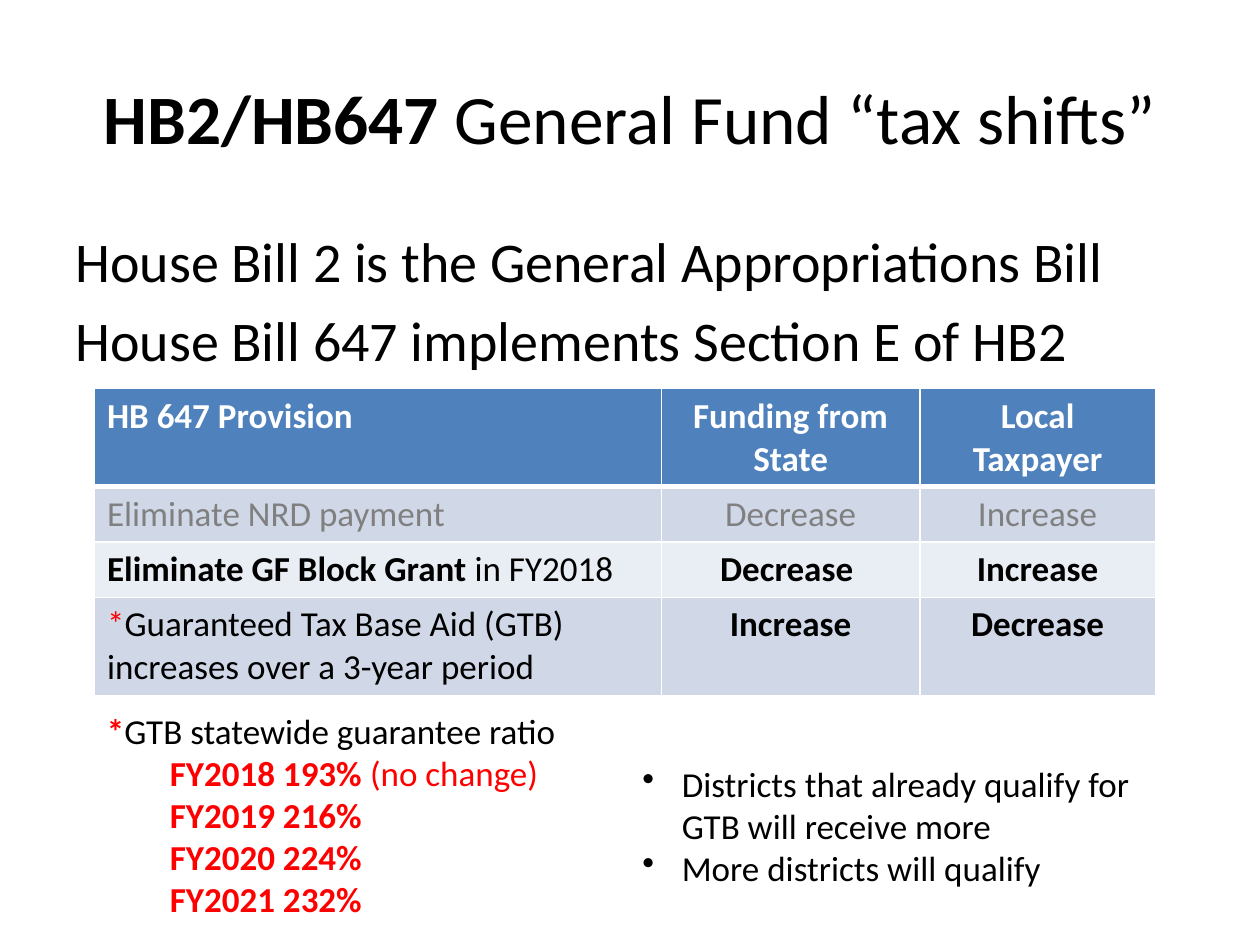
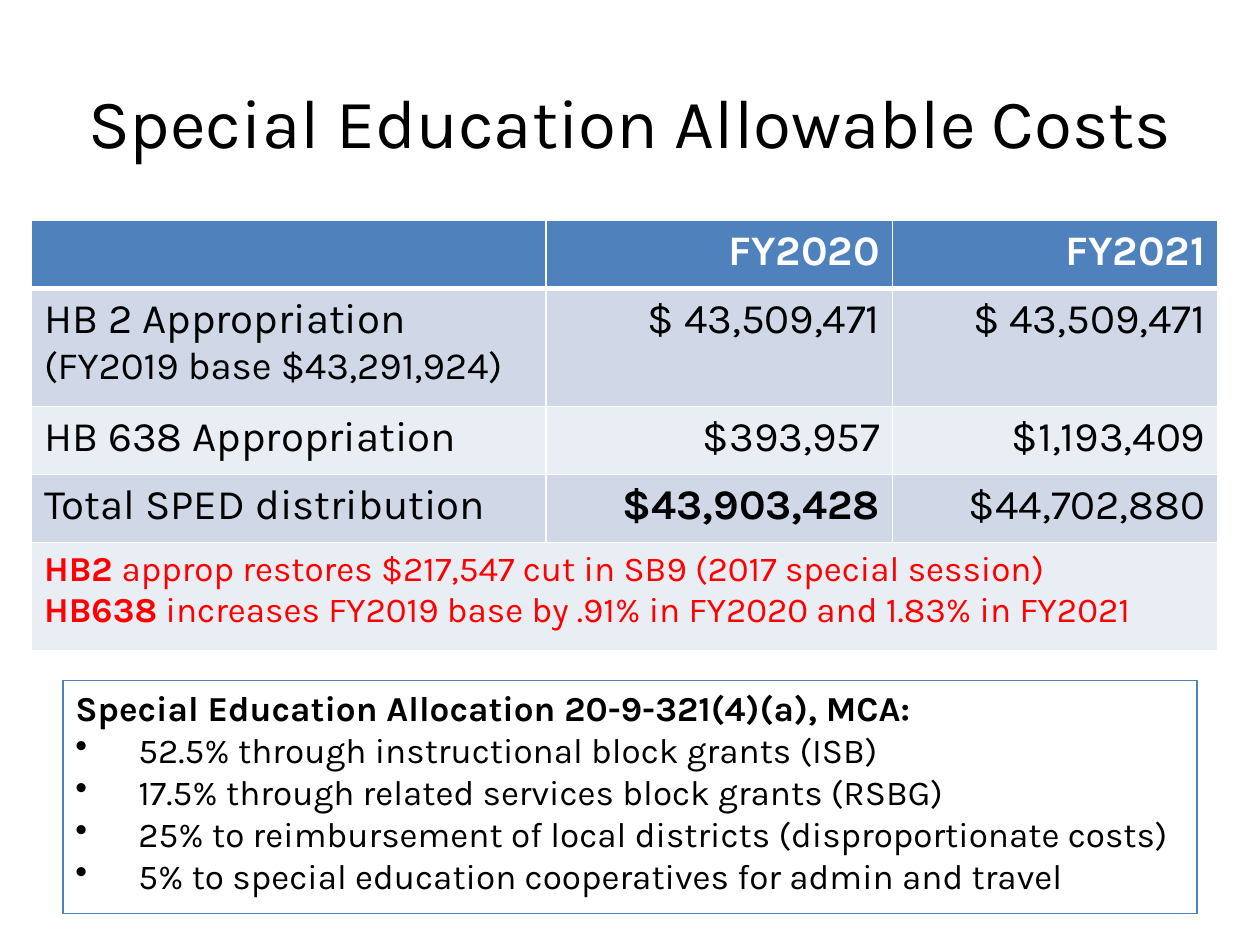
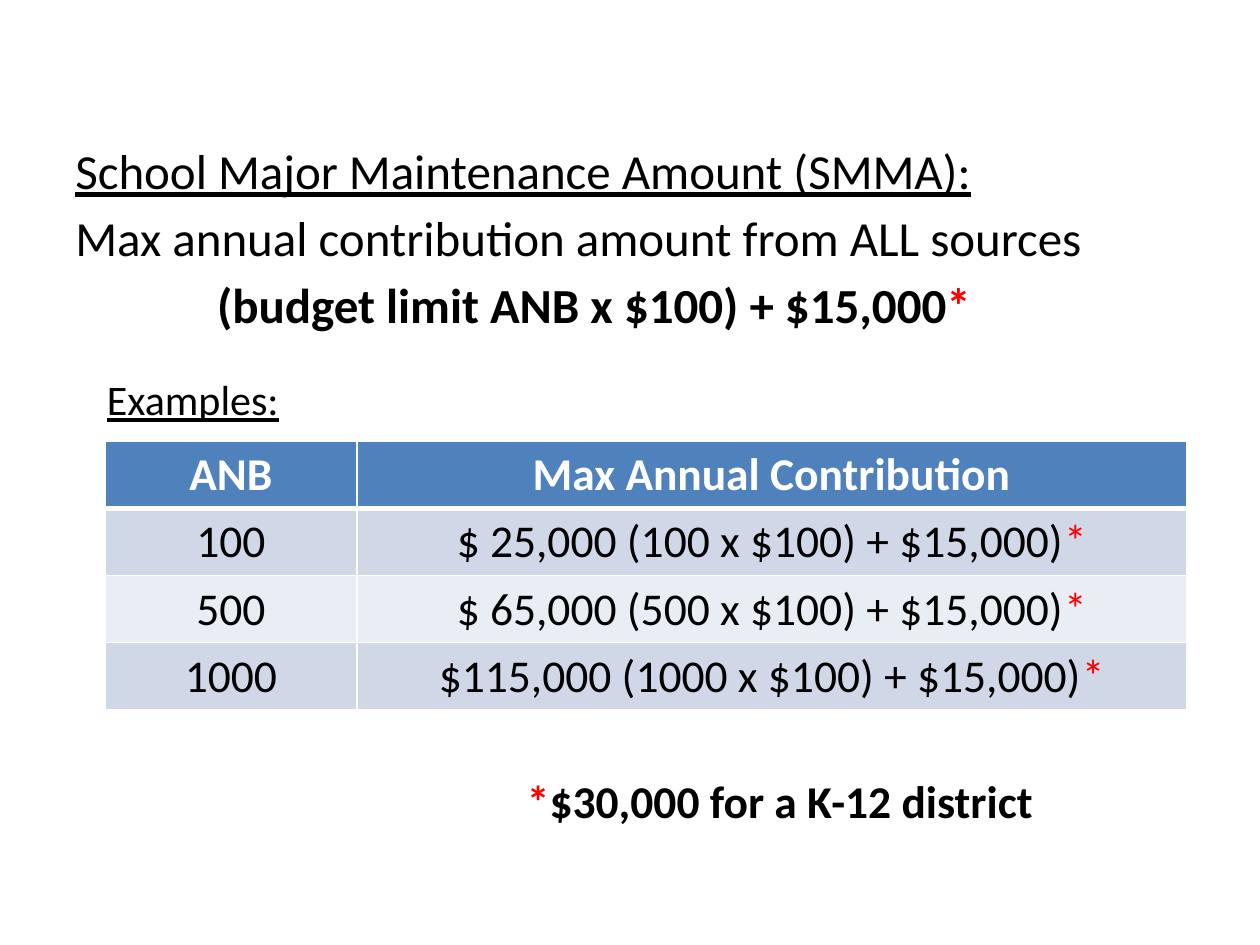
from dataclasses import dataclass, field
from typing import Any

from lxml.etree import SubElement
from pptx import Presentation
from pptx.dml.color import RGBColor
from pptx.enum.shapes import MSO_SHAPE
from pptx.enum.text import MSO_ANCHOR, PP_ALIGN
from pptx.oxml.ns import qn
from pptx.util import Pt

BLACK = RGBColor(0x00, 0x00, 0x00)
WHITE = RGBColor(0xFF, 0xFF, 0xFF)
RED = RGBColor(0xFF, 0x00, 0x00)
GRAY = RGBColor(0x80, 0x80, 0x80)
BLUE = RGBColor(0x4F, 0x81, 0xBD)
BAND_DARK = RGBColor(0xD0, 0xD8, 0xE8)
BAND_LIGHT = RGBColor(0xE9, 0xED, 0xF4)

LEFT, CENTER, RIGHT = PP_ALIGN.LEFT, PP_ALIGN.CENTER, PP_ALIGN.RIGHT
EN_SPACE = " "


@dataclass(frozen=True)
class Span:
    text: str
    format: dict[str, Any] = field(default_factory=dict)


@dataclass(frozen=True)
class Para:
    spans: tuple[Span, ...]
    align: PP_ALIGN = LEFT
    indent: float = 0
    bullet: bool = False
    format: dict[str, Any] = field(default_factory=dict)


@dataclass(frozen=True)
class Area:
    left: float
    top: float
    width: float
    height: float

    def lengths(self) -> tuple[Pt, ...]:
        return Pt(self.left), Pt(self.top), Pt(self.width), Pt(self.height)


@dataclass(frozen=True)
class Grid:
    left: float
    top: float
    columns: tuple[float, ...]
    rows: tuple[float, ...]
    aligns: tuple[PP_ALIGN, ...]


def span(text: str, **format: Any) -> Span:
    return Span(text, format)


def para(*parts: str | Span, align: PP_ALIGN = LEFT, indent: float = 0,
         bullet: bool = False, **format: Any) -> Para:
    spans = tuple(Span(part) if isinstance(part, str) else part for part in parts)
    return Para(spans, align, indent, bullet, format)


def set_indent(paragraph, indent: float, bullet: bool) -> None:
    """Indent a paragraph; a bullet hangs at the left edge of the text."""
    properties = paragraph._p.get_or_add_pPr()
    properties.set("marL", str(Pt(indent)))
    properties.set("indent", str(-Pt(indent) if bullet else 0))
    if bullet:
        SubElement(properties, qn("a:buChar")).set("char", "•")


def write(frame, paras: list[Para], **base: Any) -> None:
    """Fill a text frame; span formats override the base format."""
    for index, item in enumerate(paras):
        paragraph = frame.paragraphs[0] if index == 0 else frame.add_paragraph()
        paragraph.alignment = item.align
        for name, value in item.format.items():
            setattr(paragraph, name, value)
        if item.indent:
            set_indent(paragraph, item.indent, item.bullet)
        for part in item.spans:
            run = paragraph.add_run()
            run.text = part.text
            values = {"bold": False, "color": BLACK} | base | part.format
            run.font.color.rgb = values.pop("color")
            for name, value in values.items():
                setattr(run.font, name, value)


def add_text(page, area: Area, paras: list[Para], size: float, font: str = "Calibri",
             anchor: MSO_ANCHOR = MSO_ANCHOR.TOP, wrap: bool = True):
    box = page.shapes.add_textbox(*area.lengths())
    box.text_frame.word_wrap = wrap
    box.text_frame.vertical_anchor = anchor
    write(box.text_frame, paras, size=Pt(size), name=font)


def add_title(page, top: float, *parts: str | Span, font: str = "Calibri") -> None:
    add_text(page, Area(36, top, 648, 90), [para(*parts, align=CENTER)], 39.6, font,
             MSO_ANCHOR.MIDDLE)


def set_borders(cell, row: int) -> None:
    """White borders, thicker between the header and the first row."""
    widths = {"L": 1, "R": 1, "T": 3 if row == 1 else 1, "B": 3 if row == 0 else 1}
    properties = cell._tc.get_or_add_tcPr()
    for side, width in widths.items():
        line = SubElement(properties, qn(f"a:ln{side}"))
        line.set("w", str(Pt(width)))
        fill = SubElement(line, qn("a:solidFill"))
        SubElement(fill, qn("a:srgbClr")).set("val", str(WHITE))


def add_grid(page, grid: Grid, rows: list[list], size: float, font: str = "Calibri"):
    """Draw a banded table; a cell holds a string, a span, or a list of lines."""
    area = Area(grid.left, grid.top, sum(grid.columns), sum(grid.rows))
    table = page.shapes.add_table(len(rows), len(grid.columns), *area.lengths()).table
    for column, width in zip(table.columns, grid.columns):
        column.width = Pt(width)
    for row, height in zip(table.rows, grid.rows):
        row.height = Pt(height)
    for row, contents in enumerate(rows):
        header = row == 0
        for column in range(len(grid.columns)):
            cell = table.cell(row, column)
            set_borders(cell, row)
            cell.fill.solid()
            cell.fill.fore_color.rgb = (
                BLUE if header else BAND_DARK if row % 2 else BAND_LIGHT)
        for column, content in enumerate(contents):
            lines = content if isinstance(content, list) else [(content,)]
            paras = [para(*line, align=grid.aligns[column]) for line in lines if line != ("",)]
            write(table.cell(row, column).text_frame, paras, size=Pt(size), name=font,
                  bold=header, color=WHITE if header else BLACK)
    return table


def build_tax_shifts(page) -> None:
    add_title(page, 21.6, span("HB2/HB647", bold=True), " General Fund “tax shifts”")
    add_text(page, Area(36, 126, 648, 90), [
        para(line, space_before=Pt(6.4)) for line in (
            "House Bill 2 is the General Appropriations Bill",
            "House Bill 647 implements Section E of HB2")], 32)

    provisions = Grid(54, 222, (324, 147.6, 134.64), (56, 31.68, 31.68, 56),
                      (LEFT, CENTER, CENTER))
    add_grid(page, provisions, [
        ["HB 647 Provision", "Funding from State", "Local Taxpayer"],
        [span(text, color=GRAY)
         for text in ("Eliminate NRD payment", "Decrease", "Increase")],
        [[(span("Eliminate GF Block Grant ", bold=True), "in FY2018")],
         span("Decrease ", bold=True), span("Increase", bold=True)],
        [[(span("*", color=RED),
           "Guaranteed Tax Base Aid (GTB) increases over a 3-year period")],
         span("Increase", bold=True), span("Decrease", bold=True)],
    ], 20)

    strong = {"color": RED, "bold": True}
    add_text(page, Area(54, 402, 282, 128), [
        para(span("*", **strong), "GTB statewide guarantee ratio"),
        para(span("FY2018 193% ", **strong), span("(no change)", color=RED), indent=36),
        *(para(span(ratio, **strong), indent=36)
          for ratio in ("FY2019 216%", "FY2020 224%", "FY2021 232%")),
    ], 20)
    add_text(page, Area(360, 432, 306, 80), [
        para(line, indent=22.5, bullet=True) for line in (
            "Districts that already qualify for GTB will receive more",
            "More districts will qualify")], 20)


def build_special_education(page) -> None:
    font = "Karla"
    add_title(page, 24, "Special Education Allowable Costs", font=font)

    costs = Grid(18, 126, (294, 198, 186), (38.88, 67.5, 38.88, 38.88, 62),
                 (LEFT, RIGHT, RIGHT))
    note = {"size": Pt(20), "color": RED}
    table = add_grid(page, costs, [
        ["", "FY2020", "FY2021"],
        [[("HB 2 Appropriation",), (span("(FY2019 base $43,291,924)", size=Pt(22)),)],
         "$ 43,509,471", "$ 43,509,471"],
        ["HB 638 Appropriation", "$393,957", "$1,193,409"],
        ["Total SPED distribution", span("$43,903,428", bold=True), "$44,702,880"],
        [[(span("HB2 ", bold=True, **note),
           span("approp restores $217,547 cut in SB9 (2017 special session)", **note)),
          (span("HB638", bold=True, **note),
           span(" increases FY2019 base by .91% in FY2020 and 1.83% in FY2021", **note))]],
    ], 24, font)
    table.cell(4, 0).merge(table.cell(4, 2))

    allocation = page.shapes.add_shape(MSO_SHAPE.RECTANGLE, *Area(36, 389, 648, 133).lengths())
    allocation.shadow.inherit = False
    allocation.fill.background()
    allocation.line.color.rgb = BLUE
    allocation.line.width = Pt(0.75)
    allocation.text_frame.word_wrap = True
    allocation.text_frame.vertical_anchor = MSO_ANCHOR.TOP
    write(allocation.text_frame, [
        para(span("Special Education Allocation 20-9-321(4)(a), MCA:", bold=True)),
        *(para(share, indent=36, bullet=True) for share in (
            "52.5% through instructional block grants (ISB)",
            "17.5% through related services block grants (RSBG)",
            "25% to reimbursement of local districts (disproportionate costs)",
            "5% to special education cooperatives for admin and travel")),
    ], size=Pt(20), name=font)


def build_major_maintenance(page) -> None:
    star = span("*", color=RED)
    bold_star = span("*", color=RED, bold=True)
    add_text(page, Area(36, 72, 648, 456), [
        para(span("School Major Maintenance Amount (SMMA):", underline=True),
             line_spacing=1.14),
        para("Max annual contribution amount from ALL sources", line_spacing=1.14),
        para(span("(budget limit ANB x $100) + $15,000", bold=True), bold_star,
             indent=81, line_spacing=1.14),
    ], 28)
    add_text(page, Area(54, 210, 114, 36), [para(span("Examples:", underline=True))], 24,
             wrap=False)

    examples = Grid(60, 252, (144, 474), (38.25,) * 4, (CENTER, CENTER))
    add_grid(page, examples, [
        ["ANB", "Max Annual Contribution"],
        *([str(anb), [(f"${anb * 100 + 15000:>7,}{EN_SPACE}({anb} x $100) + $15,000)", star)]]
          for anb in (100, 500, 1000)),
    ], 26)
    add_text(page, Area(294, 438, 312, 39),
             [para(bold_star, span("$30,000 for a K-12 district", bold=True))], 26)


def main() -> None:
    deck = Presentation()
    deck.slide_width, deck.slide_height = Pt(720), Pt(540)
    blank = deck.slide_layouts[6]
    for build in (build_tax_shifts, build_special_education, build_major_maintenance):
        build(deck.slides.add_slide(blank))
    deck.save("out.pptx")


if __name__ == "__main__":
    main()
